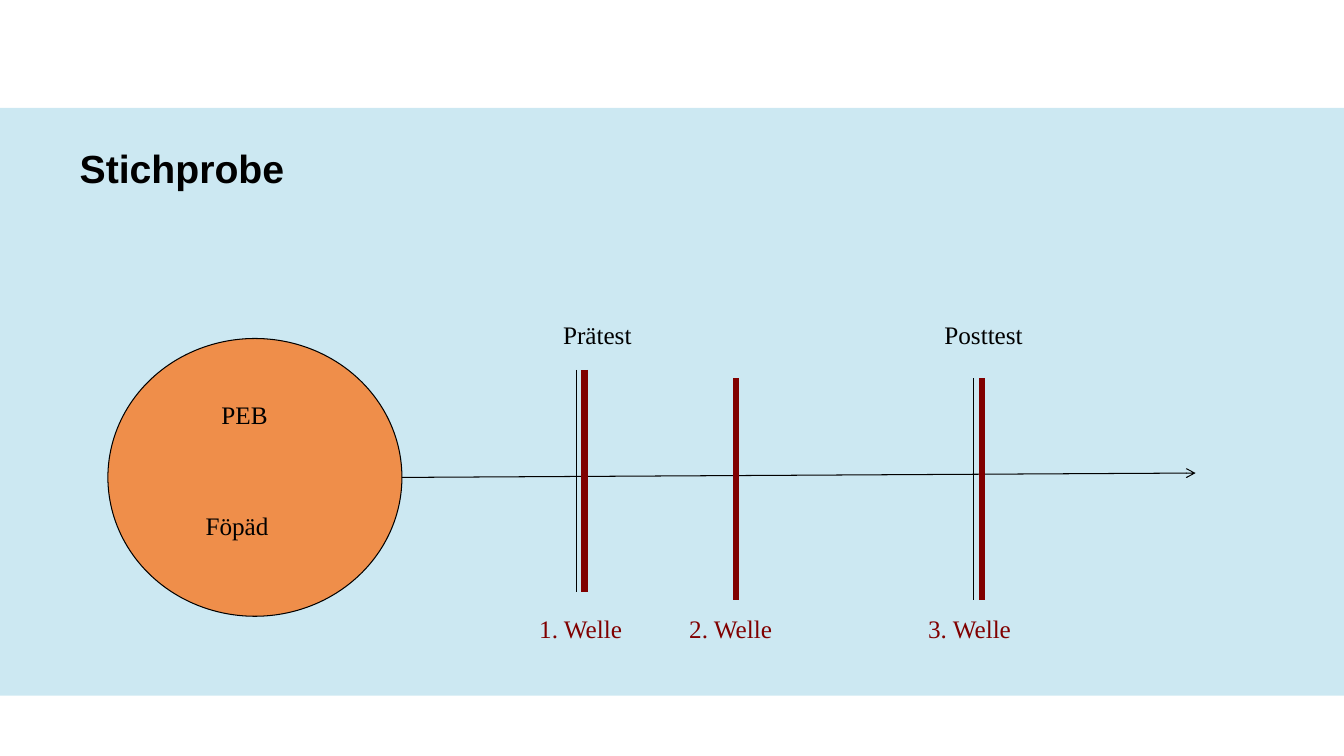
from lxml import etree
from pptx import Presentation
from pptx import util as u
from pptx.dml.color import RGBColor
from pptx.enum import shapes, text
from pptx.oxml.ns import qn

Cm, Pt = u.Cm, u.Pt
BLACK, MAROON = "000000", "800000"
BAR_LENGTH = 5.6
LABEL = {"name": "Times New Roman", "size": Pt(18)}
TITLE = {"name": "Arial", "size": Pt(28), "bold": True}


def rgb(color):
    return RGBColor.from_string(color)


def add_area(s, kind, box, color, opacity, line=None):
    """Add a see-through shape; opacity is in percent."""
    sp = s.shapes.add_shape(kind, *map(Cm, box))
    sp.shadow.inherit = False
    sp.fill.solid()
    sp.fill.fore_color.rgb = rgb(color)
    clr = sp.fill._xPr.find(qn("a:solidFill"))[0]
    etree.SubElement(clr, qn("a:alpha"), val=str(opacity * 1000))
    if line:
        sp.line.color.rgb = rgb(line)
        sp.line.width = Pt(0.75)
    else:
        sp.line.fill.background()


def add_line(s, start, end, color=BLACK, width=0.75, arrow=False):
    ends = map(Cm, (*start, *end))
    cxn = s.shapes.add_connector(shapes.MSO_CONNECTOR.STRAIGHT, *ends)
    cxn.line.color.rgb = rgb(color)
    cxn.line.width = Pt(width)
    if arrow:
        etree.SubElement(cxn.line._get_or_add_ln(), qn("a:tailEnd"), type="arrow")
    etree.SubElement(cxn._element.spPr, qn("a:effectLst"))


def add_text(s, words, box, font, color=BLACK):
    sp = s.shapes.add_textbox(*map(Cm, box))
    p = sp.text_frame.paragraphs[0]
    r = p.add_run()
    r.text = words
    for key, value in font.items():
        setattr(r.font, key, value)
    r.font.color.rgb = rgb(color)
    return sp.text_frame


def add_title(s, words):
    tf = add_text(s, words, (2.01, 3.51, 30.4, 2.01), TITLE)
    frame = dict.fromkeys(
        ("margin_left", "margin_top", "margin_right", "margin_bottom"), 0)
    frame["word_wrap"] = True
    for key, value in frame.items():
        setattr(tf, key, value)
    tf.paragraphs[0].line_spacing = 1.1


def add_label(s, words, x, y, width, color=BLACK):
    tf = add_text(s, words, (x, y, width, 1.02), LABEL, color)
    tf.word_wrap = False
    tf.auto_size = text.MSO_AUTO_SIZE.SHAPE_TO_FIT_TEXT


def add_bar(s, x, top, color=BLACK, width=0.75):
    add_line(s, (x, top), (x, top + BAR_LENGTH), color, width)


def main():
    prs = Presentation()
    prs.slide_width, prs.slide_height = Cm(33.87), Cm(19.05)
    s = prs.slides.add_slide(prs.slide_layouts[6])
    kinds = shapes.MSO_SHAPE

    add_area(s, kinds.RECTANGLE, (0, 2.72, 33.87, 14.81), "008FBE", 20)
    add_title(s, "Stichprobe")
    add_area(s, kinds.OVAL, (2.72, 8.53, 7.41, 7), "FF6600", 69, BLACK)
    add_label(s, "PEB", 5.33, 9.93, 1.8)
    add_label(s, "Föpäd", 4.93, 12.73, 2.34)
    add_line(s, (10.13, 12.03), (30.13, 11.92), arrow=True)

    # test: bar x, bar top, label x, label width
    for words, x, top, label_x, width in (
            ("Prätest", 14.53, 9.32, 13.94, 2.54),
            ("Posttest", 24.54, 9.53, 23.55, 2.82)):
        add_bar(s, x, top)
        add_label(s, words, label_x, 7.92, width)

    # wave: bar x, bar top, label x
    waves = (14.73, 9.32, 13.34), (18.54, 9.53, 17.12), (24.74, 9.53, 23.14)
    for number, (x, top, label_x) in enumerate(waves, 1):
        add_bar(s, x, top, MAROON, 4.5)
        add_label(s, f"{number}. Welle", label_x, 15.32, 2.82, MAROON)

    prs.save("out.pptx")


if __name__ == "__main__":
    main()
